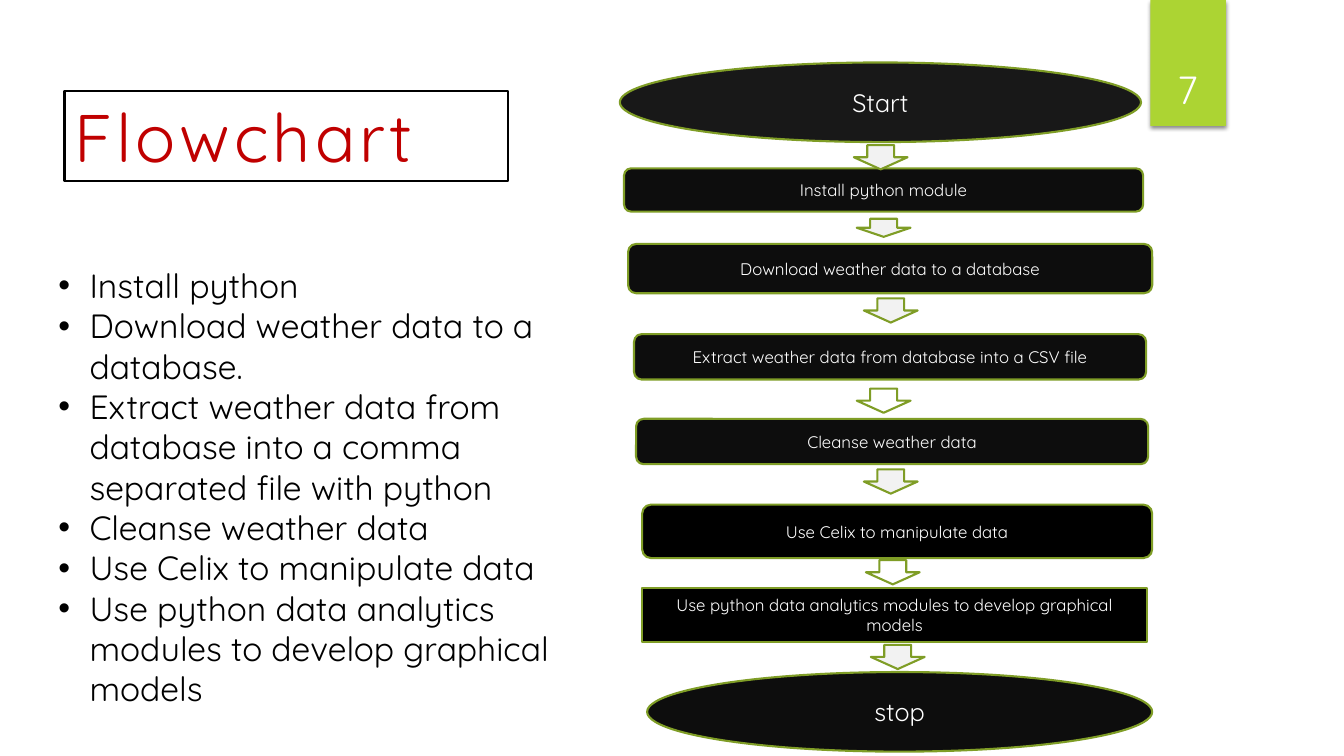
"""Build the weather data flowchart slide."""
from lxml import etree
from pptx import Presentation
from pptx import util as u
from pptx.dml.color import RGBColor
from pptx.enum import shapes, text
from pptx.oxml import parse_xml
from pptx.oxml.ns import nsdecls, qn

COLORS = {"white": "FFFFFF", "black": "000000", "coal": "0D0D0D", "start": "181818",
          "red": "C00000", "lime": "ACD433", "olive": "7F9D26", "mist": "F2F2F2"}
OVAL = shapes.MSO_SHAPE.OVAL
ROUND = shapes.MSO_SHAPE.ROUNDED_RECTANGLE
BOX = shapes.MSO_SHAPE.RECTANGLE
ARROW = shapes.MSO_SHAPE.DOWN_ARROW
LEFT, CENTER = text.PP_ALIGN.LEFT, text.PP_ALIGN.CENTER

deck = Presentation()
deck.slide_width, deck.slide_height = u.Inches(13.33), u.Inches(7.5)
page = deck.slides.add_slide(deck.slide_layouts[6])


def add_figure(kind, percent, fill=None, line=None):
    """Add a shape, or a text box if kind is None, placed in percent of the slide."""
    sides = (deck.slide_width, deck.slide_height) * 2
    area = [int(side * share / 100) for side, share in zip(sides, percent)]
    if kind is None:
        return page.shapes.add_textbox(*area)
    figure = page.shapes.add_shape(kind, *area)
    figure.shadow.inherit = False
    figure.fill.solid()
    figure.fill.fore_color.rgb = RGBColor.from_string(COLORS[fill])
    if line:
        figure.line.color.rgb = RGBColor.from_string(COLORS[line])
        figure.line.width = u.Pt(1.5)
    else:
        figure.line.fill.background()
    return figure


def write(figure, lines, size, color, align, anchor, bullet=False):
    """Write one paragraph for each line."""
    frame = figure.text_frame
    frame.word_wrap = True
    frame.vertical_anchor = anchor
    for index, line in enumerate(lines):
        para = frame.add_paragraph() if index else frame.paragraphs[0]
        para.alignment = align
        if bullet:
            marks = para._p.get_or_add_pPr()
            marks.set("marL", str(u.Inches(0.31)))
            marks.set("indent", str(-u.Inches(0.31)))
            etree.SubElement(marks, qn("a:buFont")).set("typeface", "Arial")
            etree.SubElement(marks, qn("a:buChar")).set("char", "•")
        span = para.add_run()
        span.text = line
        for name, value in {"name": "Quicksand", "size": u.Pt(size)}.items():
            setattr(span.font, name, value)
        span.font.color.rgb = RGBColor.from_string(COLORS[color])


tab = add_figure(BOX, (85.6, 0, 5.62, 16.67), "lime")
tab._element.spPr.remove(tab._element.spPr.find(qn("a:effectLst")))
tab._element.spPr.append(parse_xml(
    f'<a:effectLst {nsdecls("a")}><a:outerShdw blurRad="38100" dist="25400" dir="5400000">'
    '<a:srgbClr val="000000"><a:alpha val="45000"/></a:srgbClr></a:outerShdw></a:effectLst>'))

title = add_figure(BOX, (4.8, 12, 33, 12), "white", "black")
write(title, ["Flowchart"], 48, "red", LEFT, text.MSO_ANCHOR.MIDDLE)
title.text_frame.paragraphs[0].runs[0].font._element.set("spc", "300")

number = add_figure(None, (84.9, 4.27, 6.9, 11.2))
write(number, ["7"], 28, "white", CENTER, text.MSO_ANCHOR.BOTTOM)

steps = [
    ("Start", OVAL, "start", (46.12, 8.27, 38.78, 10.53)),
    ("Install python module", ROUND, "coal", (46.43, 22.27, 38.63, 5.73)),
    ("Download weather data to a database", ROUND, "coal", (46.73, 32.27, 39, 6.53)),
    ("Extract weather data from database into a CSV file", ROUND, "coal", (47.18, 44.2, 38.1, 6)),
    ("Cleanse weather data", ROUND, "coal", (47.33, 55.4, 38.1, 6)),
    ("Use Celix to manipulate data", ROUND, "black", (47.78, 66.75, 37.95, 7.07)),
    ("Use python data analytics modules to develop graphical models", BOX, "black",
     (47.78, 77.8, 37.58, 7.07)),
    ("stop", OVAL, "coal", (48.15, 88.9, 37.58, 10.53)),
]
for label, kind, fill, percent in steps:
    step = add_figure(kind, percent, fill, "olive")
    size = 18 if kind == OVAL else 12
    write(step, [label], size, "white", CENTER, text.MSO_ANCHOR.MIDDLE)

arrows = [(63.53, 19.2, 3.2, "mist"), (63.75, 28.93, 2.4, "mist"), (64.28, 39.47, 3.2, "mist"),
          (63.75, 51.4, 3.2, "white"), (64.28, 62.1, 3.2, "mist"), (64.43, 74.1, 3.2, "white"),
          (64.8, 85.3, 3.2, "mist")]
for left, top, height, fill in arrows:
    add_figure(ARROW, (left, top, 4, height), fill, "olive")

summary = add_figure(None, (3.6, 34.4, 39, 65))
write(summary, [
    "Install python",
    "Download weather data to a database.",
    "Extract weather data from database into a comma separated file with python",
    "Cleanse weather data",
    "Use Celix to manipulate data",
    "Use python data analytics modules to develop graphical models",
], 24, "black", LEFT, text.MSO_ANCHOR.TOP, bullet=True)

deck.save("out.pptx")
